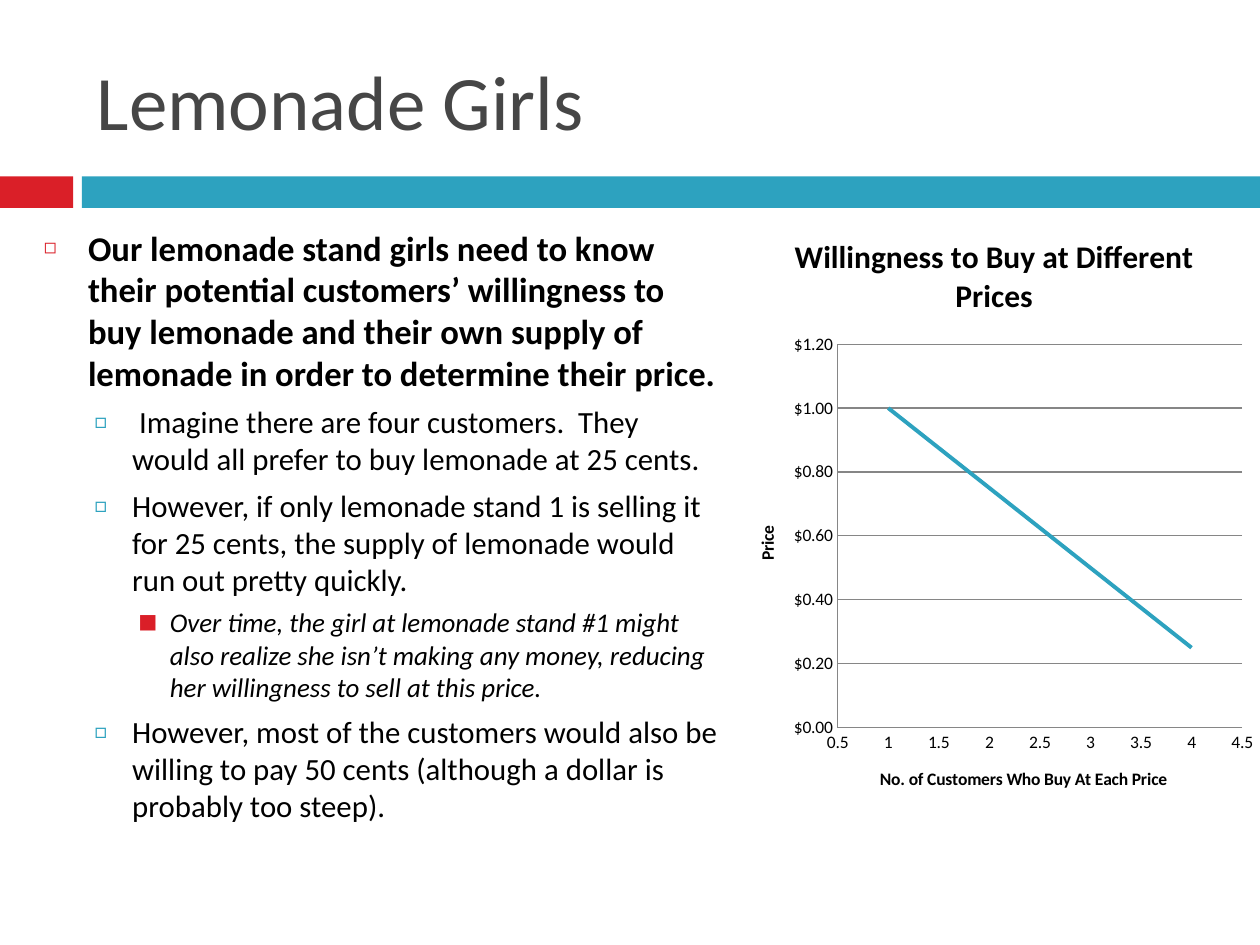
"""Build the Lemonade Girls slide with its lesson text and demand chart."""
from lxml.etree import SubElement
from pptx import Presentation
from pptx.chart.data import XyChartData
from pptx.dml.color import RGBColor
from pptx.enum.chart import XL_CHART_TYPE, XL_MARKER_STYLE, XL_TICK_MARK
from pptx.enum.shapes import MSO_SHAPE
from pptx.enum.text import MSO_ANCHOR
from pptx.oxml.ns import qn
from pptx.util import Inches, Pt

COLORS = {"red": "DA1F28", "teal": "2DA2BF", "title": "464646", "text": "000000", "grid": "868686"}
FONT = "Calibri"
LEVELS = [
    dict(left=0.35, hang=0.35, before=7, bullet="◻", color="red", scale=60, size=19.8, bold=True, italic=False),
    dict(left=0.7, hang=0.3, before=5.5, bullet="□", color="teal", scale=70, size=17.6, bold=False, italic=False),
    dict(left=1, hang=0.25, before=5, bullet="■", color="red", scale=75, size=15.4, bold=False, italic=True),
]
BODY = [
    (0, "Our lemonade stand girls need to know their potential customers’ willingness to buy "
        "lemonade and their own supply of lemonade in order to determine their price."),
    (1, " Imagine there are four customers.  They would all prefer to buy lemonade at 25 cents."),
    (1, "However, if only lemonade stand 1 is selling it for 25 cents, the supply of lemonade "
        "would run out pretty quickly."),
    (2, "Over time, the girl at lemonade stand #1 might also realize she isn’t making any money, "
        "reducing her willingness to sell at this price."),
    (1, "However, most of the customers would also be willing to pay 50 cents (although a dollar "
        "is probably too steep)."),
]


def style(font, size, color="text", bold=False, italic=False):
    font.name, font.size, font.bold, font.italic = FONT, Pt(size), bold, italic
    font.color.rgb = RGBColor.from_string(COLORS[color])


def add_text_frame(left, top, width, height):
    tf = s.shapes.add_textbox(Inches(left), Inches(top), Inches(width), Inches(height)).text_frame
    tf.word_wrap = True
    return tf


prs = Presentation()
prs.slide_width, prs.slide_height = Inches(10), Inches(7.5)
s = prs.slides.add_slide(prs.slide_layouts[6])

for left, width, color in [(0, 0.58, "red"), (0.65, 9.35, "teal")]:
    sp = s.shapes.add_shape(MSO_SHAPE.RECTANGLE, Inches(left), Inches(1.4), Inches(width), Inches(0.25))
    sp.shadow.inherit = False
    sp.fill.solid()
    sp.fill.fore_color.rgb = RGBColor.from_string(COLORS[color])
    sp.line.fill.background()

tf = add_text_frame(0.67, 0.25, 8.92, 1.08)
tf.vertical_anchor = MSO_ANCHOR.MIDDLE
r = tf.paragraphs[0].add_run()
r.text = "Lemonade Girls"
style(r.font, 44, "title")

tf = add_text_frame(0.25, 1.75, 5.58, 5.42)
for i, (level, text) in enumerate(BODY):
    look = LEVELS[level]
    p = tf.add_paragraph() if i else tf.paragraphs[0]
    p.level = level
    p.space_before = Pt(look["before"])
    r = p.add_run()
    r.text = text
    style(r.font, look["size"], bold=look["bold"], italic=look["italic"])
    pPr = p._p.get_or_add_pPr()
    pPr.set("marL", str(Inches(look["left"])))
    pPr.set("indent", str(-Inches(look["hang"])))
    SubElement(SubElement(pPr, qn("a:buClr")), qn("a:srgbClr"), val=COLORS[look["color"]])
    SubElement(pPr, qn("a:buSzPct"), val=str(look["scale"] * 1000))
    SubElement(pPr, qn("a:buFont"), typeface=FONT)
    SubElement(pPr, qn("a:buChar"), char=look["bullet"])

data = XyChartData()
series = data.add_series("Series 1")
for customers, price in [(4, 0.25), (3, 0.5), (2, 0.75), (1, 1)]:
    series.add_data_point(customers, price)
chart = s.shapes.add_chart(XL_CHART_TYPE.XY_SCATTER_LINES_NO_MARKERS, Inches(5.75), Inches(1.67),
                           Inches(4.28), Inches(4.83), data).chart
style(chart.font, 10)
chart.has_legend = False
chart.has_title = True

axes = [
    (chart.category_axis, "No. of Customers Who Buy At Each Price", 0.5, 4.5, 0.5, "General"),
    (chart.value_axis, "Price", 0, 1.2, 0.2, '"$"0.00'),
]
for axis, title, low, high, step, number_format in axes:
    axis.minimum_scale, axis.maximum_scale, axis.major_unit = low, high, step
    axis.major_tick_mark = axis.minor_tick_mark = XL_TICK_MARK.NONE
    axis.tick_labels.number_format = number_format
    axis.tick_labels.number_format_is_linked = False
    axis.has_major_gridlines = axis is chart.value_axis
    axis.format.line.color.rgb = RGBColor.from_string(COLORS["grid"])
    axis.has_title = True
chart.value_axis.major_gridlines.format.line.color.rgb = RGBColor.from_string(COLORS["grid"])

titles = [(chart.chart_title, "Willingness to Buy at Different Prices", 18)]
titles += [(axis.axis_title, title, 10) for axis, title, *scale in axes]
for holder, text, size in titles:
    r = holder.text_frame.paragraphs[0].add_run()
    r.text = text
    style(r.font, size, bold=True)
chart.chart_title.include_in_layout = False

line = chart.plots[0].series[0]
line.smooth = False
line.marker.style = XL_MARKER_STYLE.NONE
line.format.line.width = Pt(2.25)
line.format.line.color.rgb = RGBColor.from_string(COLORS["teal"])
chart.plots[0].vary_by_categories = False

plot_area = chart._chartSpace.chart.plotArea
for old in plot_area.findall(qn("c:layout")):
    plot_area.remove(old)
layout = SubElement(plot_area, qn("c:layout"))
plot_area.insert(0, layout)
manual = SubElement(layout, qn("c:manualLayout"))
for tag, value in [("layoutTarget", "inner"), ("xMode", "edge"), ("yMode", "edge"),
                   ("x", "0.21"), ("y", "0.22"), ("w", "0.75"), ("h", "0.63")]:
    SubElement(manual, qn(f"c:{tag}"), val=value)

prs.save("out.pptx")
